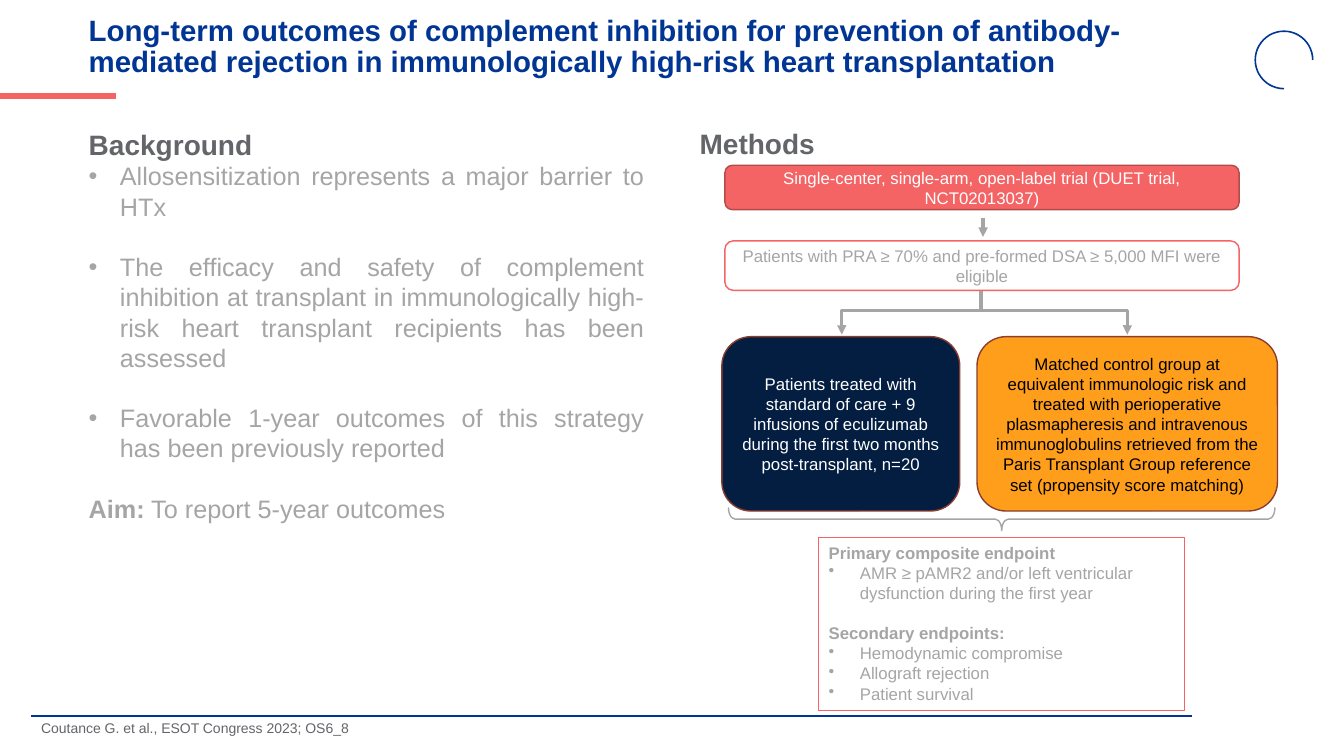
import dataclasses

import pptx
import pptx.dml.color
import pptx.enum.shapes
import pptx.enum.text
import pptx.oxml
import pptx.oxml.ns
import pptx.util

Inches = pptx.util.Inches
Pt = pptx.util.Pt
Shape = pptx.enum.shapes.MSO_SHAPE
Connector = pptx.enum.shapes.MSO_CONNECTOR
Align = pptx.enum.text.PP_ALIGN
Anchor = pptx.enum.text.MSO_ANCHOR
AutoSize = pptx.enum.text.MSO_AUTO_SIZE
DRAWING_NS = pptx.oxml.ns.nsdecls("a")


@dataclasses.dataclass(frozen=True)
class Theme:
    font: str = "Arial"
    blue: str = "003594"
    navy: str = "041E42"
    coral: str = "F46465"
    coral_dark: str = "B54A4B"
    rust: str = "8B3E30"
    orange: str = "FF9E1B"
    dark_gray: str = "636569"
    gray: str = "A5A5A5"
    white: str = "FFFFFF"
    black: str = "000000"
    title_size: float = 21
    heading_size: float = 20
    body_size: float = 18
    diagram_size: float = 12
    source_size: float = 10


THEME = Theme()
HANGING = 0.31
LINE_HEIGHT = 1.2


def rgb(color):
    return pptx.dml.color.RGBColor.from_string(color)


def drawing_element(markup):
    """Build one DrawingML element from its name and attributes."""
    return pptx.oxml.parse_xml(f"<a:{markup} {DRAWING_NS}/>")


def place(shape, box):
    for side, length in zip(("left", "top", "width", "height"), box):
        setattr(shape, side, Inches(length))


def write(paragraph, text, size, color, bold=False, align=Align.LEFT, bullet=False, gap=0, spacing=1.0):
    """Fill a paragraph; text before a '|' is bold, and gap counts lines of space before."""
    properties = paragraph._p.get_or_add_pPr()
    properties.set("marL", str(Inches(HANGING if bullet else 0)))
    properties.set("indent", str(Inches(-HANGING if bullet else 0)))
    properties.append(drawing_element('buChar char="•"' if bullet else "buNone"))
    layout = {
        "alignment": align,
        "line_spacing": spacing,
        "space_before": Pt(gap * size * LINE_HEIGHT),
        "space_after": Pt(0),
    }
    for name, value in layout.items():
        setattr(paragraph, name, value)
    lead, _, rest = text.rpartition("|")
    for words, is_bold in ((lead, True), (rest, bold)):
        if words:
            run = paragraph.add_run()
            run.text = words
            for name, value in {"name": THEME.font, "size": Pt(size), "bold": is_bold}.items():
                setattr(run.font, name, value)
            run.font.color.rgb = rgb(color)


def write_all(shape, paragraphs, anchor=Anchor.TOP):
    """Write a list of paragraph settings into a shape."""
    frame = shape.text_frame
    for name, value in {"word_wrap": True, "auto_size": AutoSize.NONE, "vertical_anchor": anchor}.items():
        setattr(frame, name, value)
    for index, settings in enumerate(paragraphs):
        write(frame.add_paragraph() if index else frame.paragraphs[0], **settings)


def add_text(slide, box, paragraphs):
    text_box = slide.shapes.add_textbox(*map(Inches, box))
    write_all(text_box, paragraphs)
    return text_box


def set_line(shape, color, width):
    shape.line.color.rgb = rgb(color)
    shape.line.width = Pt(width)


def add_outline(slide, kind, box, color, width=1.0):
    shape = slide.shapes.add_shape(kind, *map(Inches, box))
    shape.shadow.inherit = False
    shape.fill.background()
    set_line(shape, color, width)
    return shape


def add_step(slide, box, text, fill, outline, color):
    """Add a rounded box of the study flow."""
    step = add_outline(slide, Shape.ROUNDED_RECTANGLE, box, outline)
    step.fill.solid()
    step.fill.fore_color.rgb = rgb(fill)
    paragraph = {"text": text, "size": THEME.diagram_size, "color": color, "align": Align.CENTER}
    write_all(step, [paragraph], Anchor.MIDDLE)


def add_line(slide, start, end, color, width, arrow=False, kind=Connector.STRAIGHT):
    line = slide.shapes.add_connector(kind, *map(Inches, start + end))
    set_line(line, color, width)
    if arrow:
        line.line._get_or_add_ln().append(drawing_element('tailEnd type="triangle"'))
    line._element.spPr.append(drawing_element("effectLst"))
    return line


def add_branch(slide, start, end):
    """Add an arrow that runs sideways and turns down at its end."""
    branch = add_line(slide, start, end, THEME.gray, 2.25, True, Connector.ELBOW)
    adjustments = branch._element.spPr.prstGeom.get_or_add_avLst()
    adjustments.append(drawing_element('gd name="adj1" fmla="val 100100"'))


def add_frame(slide):
    """Add the title, the source line and the decoration around the content."""
    add_line(slide, (0, 0.95), (1.15, 0.95), THEME.coral, 4.5)
    add_line(slide, (0.31, 7.1), (11.82, 7.1), THEME.blue, 1.5)
    title = slide.shapes.title
    place(title, (0.78, 0.15, 11.5, 0.64))
    write_all(title, [{
        "text": "Long-term outcomes of complement inhibition for prevention of antibody-mediated "
                "rejection in immunologically high-risk heart transplantation",
        "size": THEME.title_size, "color": THEME.blue, "bold": True, "spacing": 0.9,
    }], Anchor.MIDDLE)
    add_text(slide, (0.31, 7.11, 7.84, 0.34), [{
        "text": "Coutance G. et al., ESOT Congress 2023; OS6_8",
        "size": THEME.source_size, "color": THEME.dark_gray, "spacing": 0.9,
    }])
    ring = add_outline(slide, Shape.ARC, (12.45, 0.31, 0.57, 0.57), THEME.blue, 1.13)
    ring.adjustments[0] = 54
    ring.adjustments[1] = 0


def heading(text):
    return {"text": text, "size": THEME.heading_size, "color": THEME.dark_gray, "bold": True}


def add_background(slide):
    points = (
        "Allosensitization represents a major barrier to HTx",
        "The efficacy and safety of complement inhibition at transplant in immunologically "
        "high-risk heart transplant recipients has been assessed",
        "Favorable 1-year outcomes of this strategy has been previously reported",
    )
    body = {"size": THEME.body_size, "color": THEME.gray, "align": Align.JUSTIFY}
    paragraphs = [heading("Background")]
    paragraphs += [{**body, "text": point, "bullet": True, "gap": min(index, 1)}
                   for index, point in enumerate(points)]
    paragraphs.append({**body, "text": "Aim:| To report 5-year outcomes", "gap": 1})
    background = slide.placeholders[1]
    place(background, (0.78, 1.21, 5.71, 4.07))
    write_all(background, paragraphs)


def add_methods(slide):
    add_text(slide, (6.84, 1.21, 5.81, 0.44), [heading("Methods")])
    add_step(slide, (7.19, 1.64, 5.1, 0.44),
             "Single-center, single-arm, open-label trial (DUET trial, NCT02013037)",
             THEME.coral, THEME.coral_dark, THEME.white)
    add_step(slide, (7.19, 2.39, 5.1, 0.49),
             "Patients with PRA ≥ 70% and pre-formed DSA ≥ 5,000 MFI were eligible",
             THEME.white, THEME.coral, THEME.gray)
    add_line(slide, (9.75, 2.16), (9.75, 2.35), THEME.gray, 2.25, arrow=True)
    add_line(slide, (9.73, 2.89), (9.73, 3.09), THEME.gray, 2.25)
    for arm_center in (8.35, 11.18):
        add_branch(slide, (9.73, 3.08), (arm_center, 3.32))
    add_step(slide, (7.16, 3.34, 2.36, 1.73),
             "Patients treated with standard of care + 9 infusions of eculizumab during the first "
             "two months post-transplant, n=20",
             THEME.navy, THEME.rust, THEME.white)
    add_step(slide, (9.69, 3.34, 2.98, 1.73),
             "Matched control group at equivalent immunologic risk and treated with perioperative "
             "plasmapheresis and intravenous immunoglobulins retrieved from the Paris Transplant "
             "Group reference set (propensity score matching)",
             THEME.orange, THEME.rust, THEME.black)
    brace = add_outline(slide, Shape.RIGHT_BRACE, (9.82, 2.44, 0.23, 5.42), THEME.gray)
    brace.rotation = 90
    brace.adjustments[0] = 0.28


def add_endpoints(slide):
    endpoints = {
        "Primary composite endpoint": (
            "AMR ≥ pAMR2 and/or left ventricular dysfunction during the first year",),
        "Secondary endpoints:": ("Hemodynamic compromise", "Allograft rejection", "Patient survival"),
    }
    body = {"size": THEME.diagram_size, "color": THEME.gray}
    paragraphs = []
    for group, items in endpoints.items():
        paragraphs.append({**body, "text": group, "bold": True, "gap": 1 if paragraphs else 0})
        paragraphs += [{**body, "text": item, "bullet": True} for item in items]
    set_line(add_text(slide, (8.12, 5.33, 3.63, 1.72), paragraphs), THEME.coral, 0.75)


def main():
    presentation = pptx.Presentation()
    presentation.slide_width = Inches(13.33)
    presentation.slide_height = Inches(7.5)
    slide = presentation.slides.add_slide(presentation.slide_layouts[1])
    add_frame(slide)
    add_background(slide)
    add_methods(slide)
    add_endpoints(slide)
    presentation.save("out.pptx")


if __name__ == "__main__":
    main()
